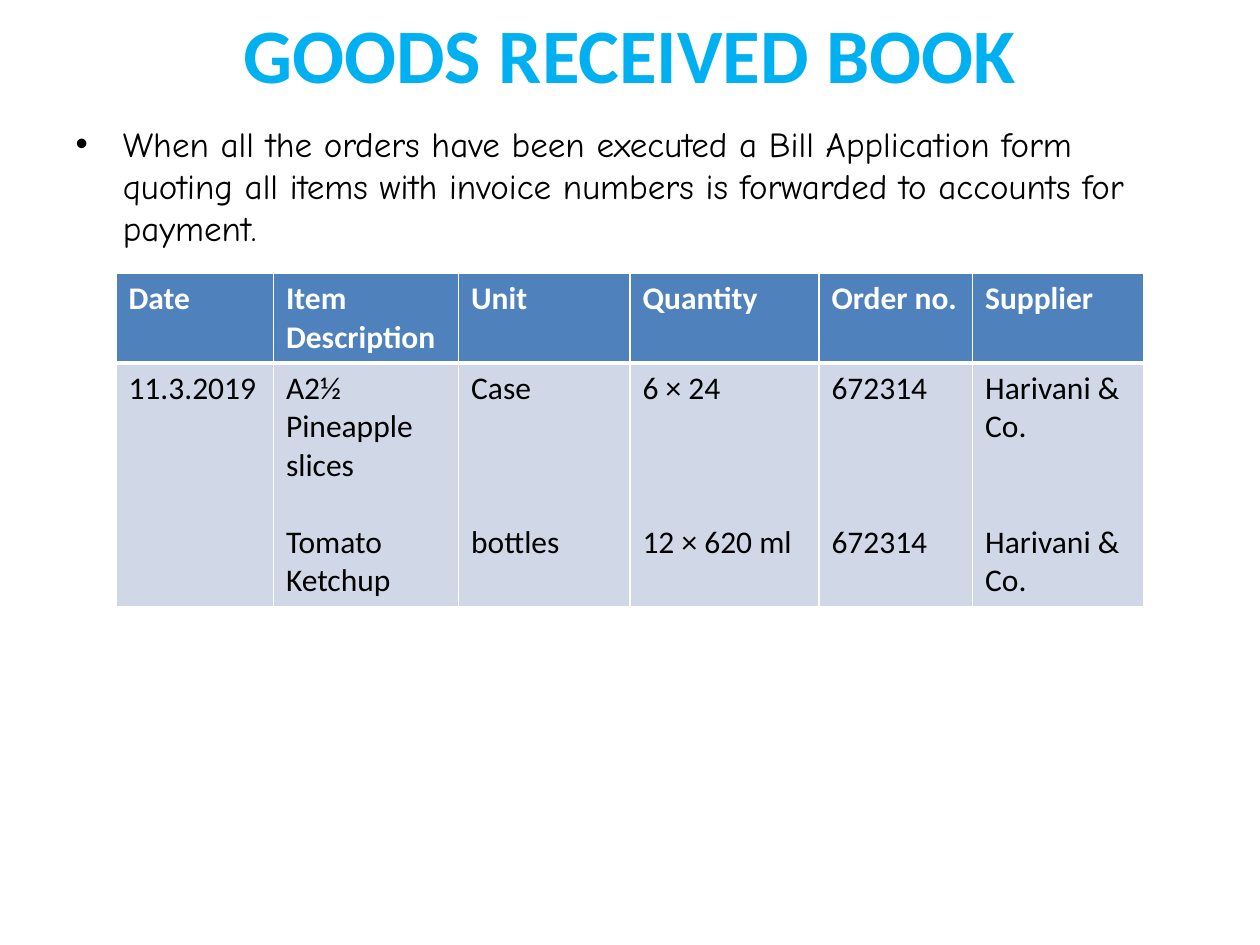
"""Build the goods received book slide."""
from lxml.etree import SubElement
from pptx import Presentation
from pptx.dml.color import RGBColor
from pptx.enum.text import MSO_ANCHOR
from pptx.oxml.ns import qn
from pptx.util import Inches, Pt

COLORS = {"title": "00B0F0", "text": "000000", "header": "4F81BD",
          "body": "D0D8E8", "white": "FFFFFF"}
COLS = [1.25, 1.47, 1.36, 1.5, 1.22, 1.36]
ROWS = [0.69, 1.91]
LINE = 22
HEADERS = ["Date", "Item Description", "Unit", "Quantity", "Order no.", "Supplier"]
ENTRIES = [["11.3.2019"], ["A2½ Pineapple slices", "Tomato Ketchup"],
           ["Case", "bottles"], ["6 × 24", "12 × 620 ml"],
           ["672314", "672314"], ["Harivani & Co.", "Harivani & Co."]]
GAP_LINES = [0, 1, 3, 3, 3, 2]


def style(p, font, size, color, bold=False):
    """Set the font of a paragraph."""
    p.font.name, p.font.size, p.font.bold = font, Pt(size), bold
    p.font.color.rgb = RGBColor.from_string(COLORS[color])


def fill_placeholder(sp, box, text, *font):
    """Move a placeholder and give it one styled paragraph."""
    sp.left, sp.top, sp.width, sp.height = (Inches(v) for v in box)
    sp.text_frame.text = text
    style(sp.text_frame.paragraphs[0], *font)


def add_borders(cell, top, bottom):
    """Draw white borders around a cell, widths in points."""
    tc_pr = cell._tc.get_or_add_tcPr()
    for side, width in zip("LRTB", (1, 1, top, bottom)):
        ln = SubElement(tc_pr, qn(f"a:ln{side}"), w=str(Pt(width)))
        solid = SubElement(ln, qn("a:solidFill"))
        SubElement(solid, qn("a:srgbClr"), val=COLORS["white"])


def fill_cell(cell, lines, gap, header):
    """Write the lines of a cell, with a gap in text lines between them."""
    add_borders(cell, 1 if header else 3, 3 if header else 1)
    cell.fill.solid()
    cell.fill.fore_color.rgb = RGBColor.from_string(COLORS["header" if header else "body"])
    tf = cell.text_frame
    tf.text = "\n".join(lines)
    for i, p in enumerate(tf.paragraphs):
        if i:
            p.space_before = Pt(gap * LINE)
        style(p, "Calibri", 18, "white" if header else "text", header)


def add_book(s, left, top):
    """Add the table of received goods."""
    table = s.shapes.add_table(len(ROWS), len(COLS), Inches(left), Inches(top),
                               Inches(sum(COLS)), Inches(sum(ROWS))).table
    for row, height in zip(table.rows, ROWS):
        row.height = Inches(height)
    for c, width in enumerate(COLS):
        table.columns[c].width = Inches(width)
        fill_cell(table.cell(0, c), [HEADERS[c]], 0, True)
        fill_cell(table.cell(1, c), ENTRIES[c], GAP_LINES[c], False)


def main():
    """Build and save the slide."""
    prs = Presentation()
    prs.slide_width, prs.slide_height = Inches(10), Inches(7.5)
    s = prs.slides.add_slide(prs.slide_layouts[1])
    title, body = s.placeholders
    fill_placeholder(title, (0.5, 0, 9, 0.83), "GOODS RECEIVED BOOK",
                     "Calibri", 44, "title", True)
    title.text_frame.vertical_anchor = MSO_ANCHOR.MIDDLE
    fill_placeholder(body, (0.5, 0.92, 9, 5.78),
                     "When all the orders have been executed a Bill Application form "
                     "quoting all items with invoice numbers is forwarded to accounts "
                     "for payment.", "Comic Neue", 20, "text")
    add_book(s, 0.92, 2.17)
    prs.save("out.pptx")


if __name__ == "__main__":
    main()
